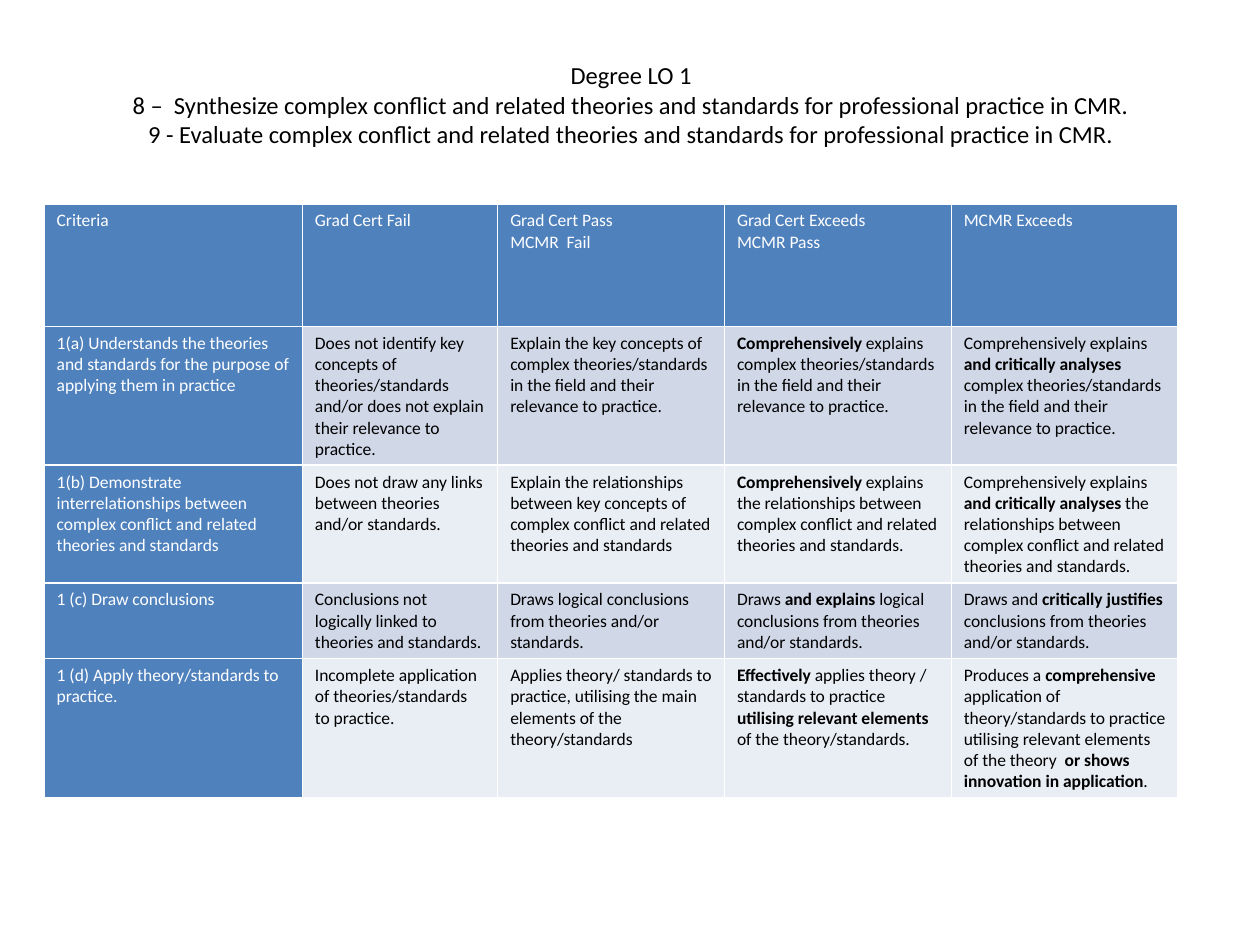
from pptx import Presentation
from pptx import util as u
from pptx.dml.color import RGBColor
from pptx.enum import text

FONT = "Calibri"
WHITE, BLACK, BLUE = "FFFFFF", "000000", "4F81BD"
BANDS = ("D0D8E8", "E9EDF4")
TITLE_BOX = (0.51, 0.36, 9, 0.94)
TABLE_BOX = (0.35, 1.62, 9, 5.03)
COLUMNS = (2.05, 1.55, 1.8, 1.8, 1.8)
ROWS = (0.97, 0.61, 0.61, 0.55, 0.55)

TITLE = (
    "Degree LO 1",
    "8 –  Synthesize complex conflict and related theories and standards for professional practice in CMR.",
    "9 - Evaluate complex conflict and related theories and standards for professional practice in CMR.",
)
# Each * switches bold on or off.
RUBRIC = (
    ("Criteria", "Grad Cert Fail", "Grad Cert Pass\nMCMR  Fail",
     "Grad Cert Exceeds\nMCMR Pass", "MCMR Exceeds"),
    ("1(a) Understands the theories and standards for the purpose of applying them in practice",
     "Does not identify key concepts of theories/standards and/or does not explain their relevance to practice.",
     "Explain the key concepts of complex theories/standards  in the field and their relevance to practice.",
     "*Comprehensively* explains complex theories/standards in the field and their relevance to practice.",
     "Comprehensively explains *and critically analyses *complex theories/standards in the field "
     "and their relevance to practice."),
    ("1(b) Demonstrate interrelationships between complex conflict and related theories and standards",
     "Does not draw any links between theories and/or standards.",
     "Explain the relationships between key concepts of complex conflict and related theories and standards",
     "*Comprehensively* explains the relationships between complex conflict and related theories and standards.",
     "Comprehensively explains *and critically analyses *the relationships between complex conflict "
     "and related theories and standards."),
    ("1 (c) Draw conclusions",
     "Conclusions not logically linked to theories and standards.",
     "Draws logical conclusions from theories and/or standards.",
     "Draws *and explains *logical conclusions from theories and/or standards.",
     "Draws and *critically justifies *conclusions from theories and/or standards."),
    ("1 (d) Apply theory/standards to practice.",
     "Incomplete application of theories/standards to practice.",
     "Applies theory/ standards to practice, utilising the main elements of the theory/standards",
     "*Effectively* applies theory / standards to practice *utilising relevant elements *of the theory/standards.",
     "Produces a *comprehensive* application of theory/standards to practice utilising relevant elements "
     "of the theory  *or shows innovation in application*."),
)


def color(value):
    return RGBColor.from_string(value)


def set_font(font, size, value):
    font.name, font.size = FONT, u.Pt(size)
    font.color.rgb = color(value)


def add_title(page, box):
    frame = page.shapes.add_textbox(*map(u.Inches, box)).text_frame
    frame.word_wrap = True
    frame.vertical_anchor = text.MSO_ANCHOR.MIDDLE
    para = frame.paragraphs[0]
    para.text = "\v".join(TITLE)
    para.alignment = text.PP_ALIGN.CENTER
    set_font(para.font, 14, BLACK)


def fill_cell(cell, content, fill, ink):
    cell.fill.solid()
    cell.fill.fore_color.rgb = color(fill)
    for number, line in enumerate(content.split("\n")):
        frame = cell.text_frame
        para = frame.add_paragraph() if number else frame.paragraphs[0]
        for index, part in enumerate(line.split("*")):
            if part:
                span = para.add_run()
                span.text = part
                span.font.bold = index % 2 == 1
                set_font(span.font, 10, ink)


def add_rubric(page, box):
    shape = page.shapes.add_table(len(ROWS), len(COLUMNS), *map(u.Inches, box))
    table = shape.table
    for column, width in zip(table.columns, COLUMNS):
        column.width = u.Inches(width)
    for row, height in zip(table.rows, ROWS):
        row.height = u.Inches(height)  # rows grow to fit their text
    shape.height = u.Inches(box[3])
    for r, contents in enumerate(RUBRIC):
        for c, content in enumerate(contents):
            heading = r == 0 or c == 0
            fill_cell(table.cell(r, c), content,
                      BLUE if heading else BANDS[(r - 1) % 2],
                      WHITE if heading else BLACK)


def main():
    deck = Presentation()
    deck.slide_width, deck.slide_height = u.Inches(10), u.Inches(7.5)
    page = deck.slides.add_slide(deck.slide_layouts[6])
    add_title(page, TITLE_BOX)
    add_rubric(page, TABLE_BOX)
    deck.save("out.pptx")


if __name__ == "__main__":
    main()
